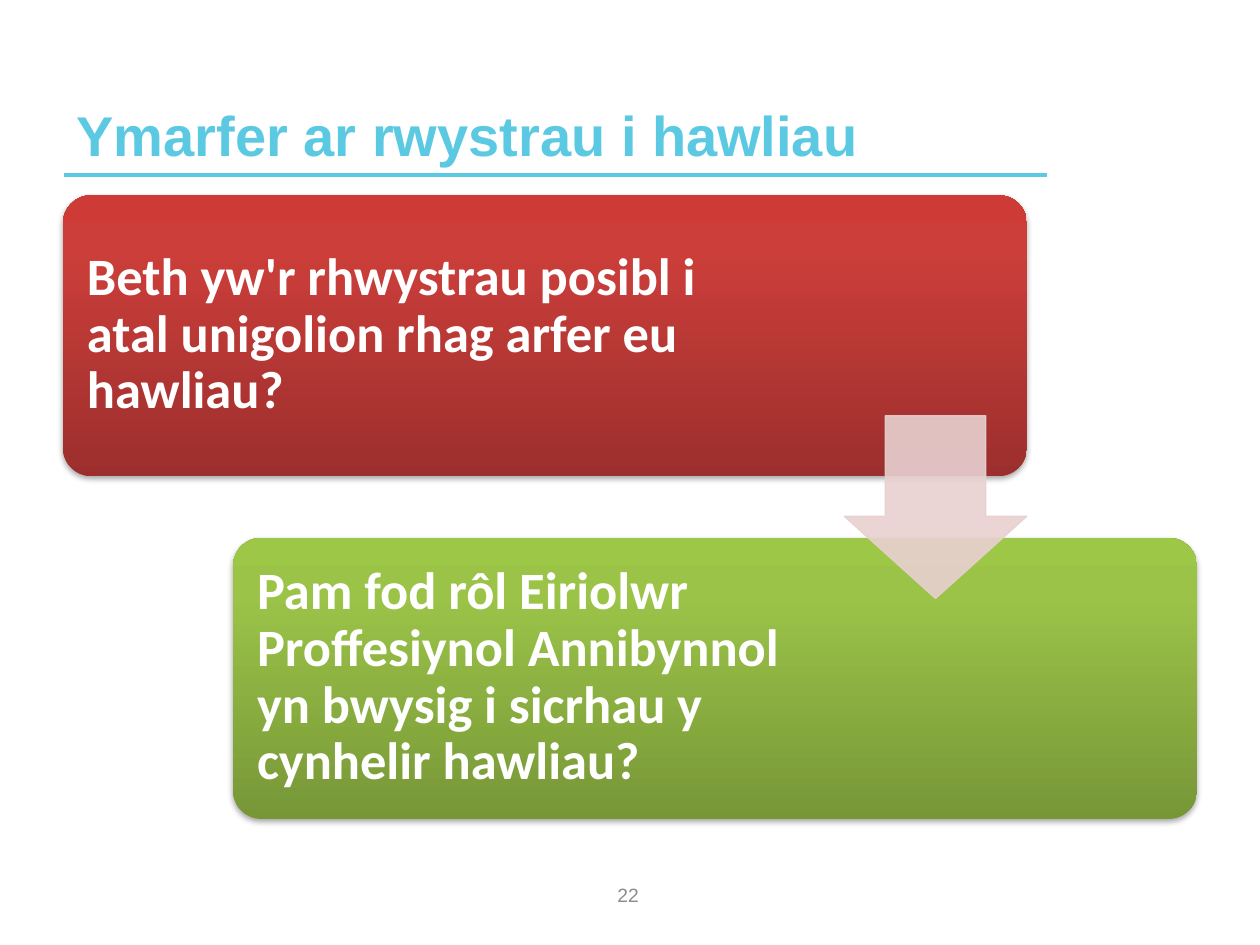
from lxml import etree
from pptx import Presentation
from pptx.dml.color import RGBColor
from pptx.enum.shapes import MSO_CONNECTOR, MSO_SHAPE
from pptx.enum.text import MSO_ANCHOR, PP_ALIGN
from pptx.oxml.ns import qn
from pptx.util import Inches, Pt

LEFT, CENTER = PP_ALIGN.LEFT, PP_ALIGN.CENTER
MIDDLE, BOTTOM = MSO_ANCHOR.MIDDLE, MSO_ANCHOR.BOTTOM
ROUND_RECT, DOWN_ARROW = MSO_SHAPE.ROUNDED_RECTANGLE, MSO_SHAPE.DOWN_ARROW
STRAIGHT = MSO_CONNECTOR.STRAIGHT

CYAN, WHITE, GREY, PINK = "5CC9E3", "FFFFFF", "8C8C8C", "E8D0D0"
RED_STOPS = [(0, "9C2F2D"), (80, "CB3E3A"), (100, "CE3B37")]
GREEN_STOPS = [(0, "779737"), (80, "9BC348"), (100, "9DC746")]
CARD_W, CARD_H = 7.65, 2.23
CARDS = [
    (0.5, 1.55, 5.35, RED_STOPS,
     "Beth yw'r rhwystrau posibl i atal unigolion rhag arfer eu hawliau?"),
    (1.85, 4.27, 4.72, GREEN_STOPS,
     "Pam fod rôl Eiriolwr Proffesiynol Annibynnol yn bwysig i sicrhau y "
     "cynhelir hawliau?"),
]


def rgb(value):
    return RGBColor.from_string(value)


def add_color(parent, value, alpha=None):
    color = etree.SubElement(parent, qn("a:srgbClr"), val=value)
    if alpha is not None:
        etree.SubElement(color, qn("a:alpha"), val=str(alpha * 1000))


def add_text(slide, text, x, y, w, h, size, color, font="Arial", bold=False,
             align=LEFT, anchor=MIDDLE, inset=None, spacing=None):
    tf = slide.shapes.add_textbox(Inches(x), Inches(y), Inches(w), Inches(h)).text_frame
    tf.word_wrap = True
    tf.vertical_anchor = anchor
    if inset is not None:
        tf.margin_left = tf.margin_right = Inches(inset)
        tf.margin_top = tf.margin_bottom = Inches(inset)
    p = tf.paragraphs[0]
    p.alignment = align
    if spacing:
        p.line_spacing = spacing
    r = p.add_run()
    r.text = text
    r.font.name, r.font.size, r.font.bold = font, Pt(size), bold
    r.font.color.rgb = rgb(color)


def add_rule(slide, x1, x2, y, color, width):
    line = slide.shapes.add_connector(STRAIGHT, Inches(x1), Inches(y), Inches(x2), Inches(y))
    line.line.color.rgb = rgb(color)
    line.line.width = Pt(width)
    etree.SubElement(line._element.spPr, qn("a:effectLst"))


def set_gradient(sp, stops):
    """Fill from bottom to top with (percent, colour) stops."""
    sp.fill.gradient()
    grad = sp._element.spPr.find(qn("a:gradFill"))
    for child in list(grad):
        grad.remove(child)
    stop_list = etree.SubElement(grad, qn("a:gsLst"))
    for percent, color in stops:
        add_color(etree.SubElement(stop_list, qn("a:gs"), pos=str(percent * 1000)), color)
    etree.SubElement(grad, qn("a:lin"), ang="16200000", scaled="0")


def set_shadow(sp):
    sp.shadow.inherit = False
    effects = sp._element.spPr.find(qn("a:effectLst"))
    shadow = etree.SubElement(effects, qn("a:outerShdw"), blurRad=str(Pt(3.1)),
                              dist=str(Pt(1.8)), dir="5400000", rotWithShape="0")
    add_color(shadow, "000000", 35)


def add_card(slide, x, y, text_w, stops, text):
    sp = slide.shapes.add_shape(ROUND_RECT, Inches(x), Inches(y),
                                Inches(CARD_W), Inches(CARD_H))
    sp.adjustments[0] = 0.1
    set_gradient(sp, stops)
    sp.line.fill.background()
    set_shadow(sp)
    add_text(slide, text, x + 0.07, y + 0.06, text_w, 2.1, 30, WHITE,
             font="Calibri", bold=True, inset=0.12, spacing=0.9)


def add_arrow(slide, x, y, size, color, alpha):
    sp = slide.shapes.add_shape(DOWN_ARROW, Inches(x), Inches(y), Inches(size), Inches(size))
    sp.adjustments[0], sp.adjustments[1] = 0.55, 0.45
    sp.shadow.inherit = False
    sp.fill.solid()
    sp.fill.fore_color.rgb = rgb(color)
    sp.line.color.rgb = rgb(color)
    sp.line.width = Pt(0.75)
    for clr in sp._element.spPr.iter(qn("a:srgbClr")):
        etree.SubElement(clr, qn("a:alpha"), val=str(alpha * 1000))


def main():
    prs = Presentation()
    prs.slide_width, prs.slide_height = Inches(10), Inches(7.5)
    slide = prs.slides.add_slide(prs.slide_layouts[6])
    add_rule(slide, 0.51, 8.31, 1.39, CYAN, 2)
    add_text(slide, "Ymarfer ar rwystrau i hawliau", 0.51, 0.29, 7.8, 1.09,
             32, CYAN, bold=True, anchor=BOTTOM)
    for card in CARDS:
        add_card(slide, *card)
    add_arrow(slide, 6.7, 3.3, 1.45, PINK, 90)
    add_text(slide, "22", 3.82, 6.9, 2.33, 0.4, 11, GREY, align=CENTER)
    prs.save("out.pptx")


if __name__ == "__main__":
    main()
